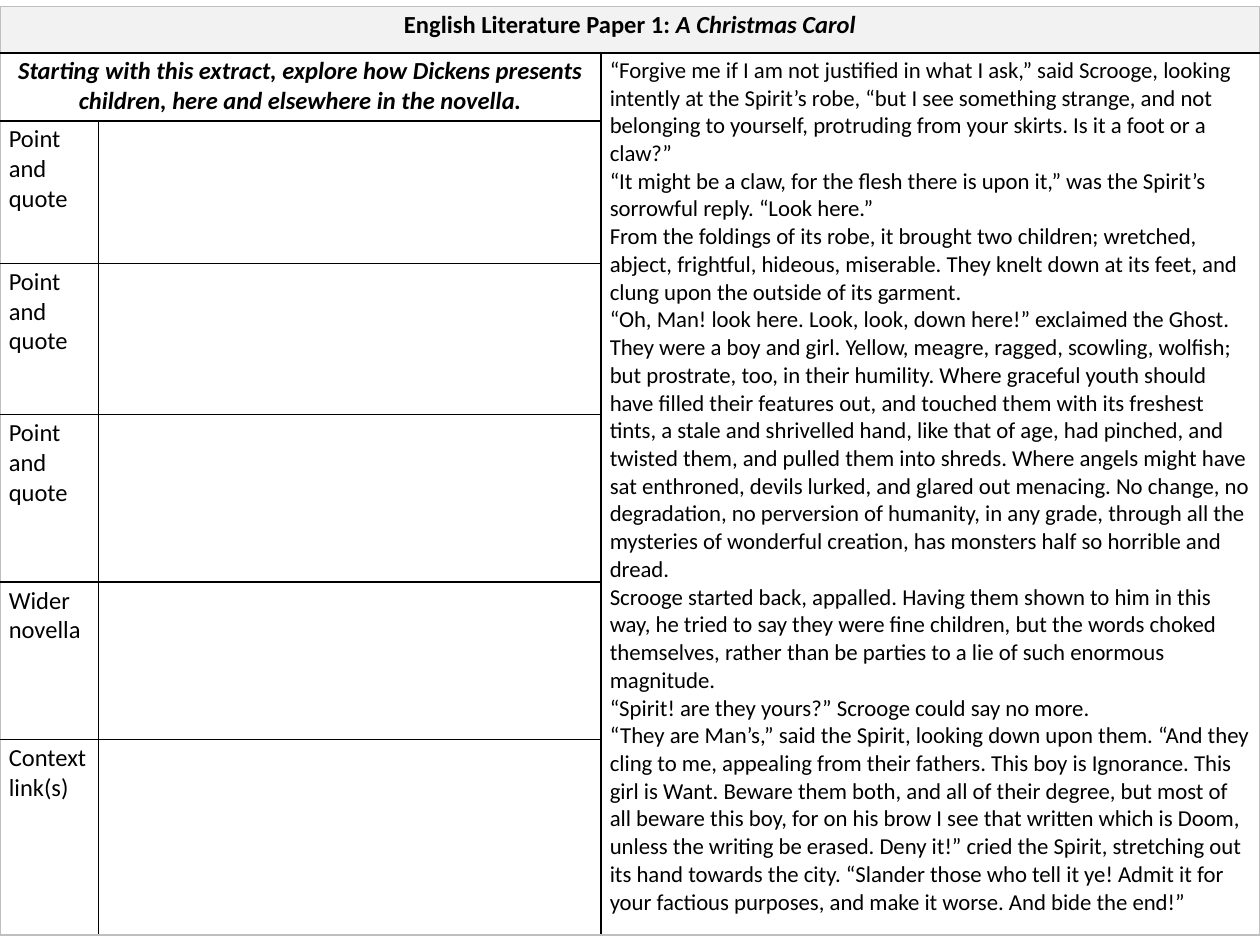
import pptx
import pptx.dml.color
import pptx.enum.text
import pptx.oxml.ns
import pptx.util
from lxml import etree

Inches = pptx.util.Inches
CENTER = pptx.enum.text.PP_ALIGN.CENTER
COLORS = {"text": "000000", "header": "F2F2F2", "inner": "000000", "outer": "BFBFBF"}
COLUMN_WIDTHS = [0.78, 3.99, 5.23]
ROW_HEIGHTS = [0.37, 0.54, 1.13, 1.2, 1.33, 1.25, 1.55]
MERGES = [(0, 0, 0, 2), (1, 0, 1, 1), (1, 2, 6, 2)]
MARGINS = {"margin_left": 0.07, "margin_right": 0.07, "margin_top": 0.03, "margin_bottom": 0.03}
LABEL = {"size": pptx.util.Pt(14), "bold": False, "italic": False}
HEADING = {**LABEL, "bold": True}
PROMPT = {**HEADING, "italic": True}
BODY = {**LABEL, "size": pptx.util.Pt(13)}

TASK = "Starting with this extract, explore how Dickens presents children, here and elsewhere in the novella."
LABELS = ["Point and quote"] * 3 + ["Wider novella", "Context link(s)"]
EXTRACT = [
    "“Forgive me if I am not justified in what I ask,” said Scrooge, looking intently at the "
    "Spirit’s robe, “but I see something strange, and not belonging to yourself, protruding from "
    "your skirts. Is it a foot or a claw?”",
    "“It might be a claw, for the flesh there is upon it,” was the Spirit’s sorrowful reply. “Look here.”",
    "From the foldings of its robe, it brought two children; wretched, abject, frightful, hideous, "
    "miserable. They knelt down at its feet, and clung upon the outside of its garment.",
    "“Oh, Man! look here. Look, look, down here!” exclaimed the Ghost.",
    "They were a boy and girl. Yellow, meagre, ragged, scowling, wolfish; but prostrate, too, in "
    "their humility. Where graceful youth should have filled their features out, and touched them "
    "with its freshest tints, a stale and shrivelled hand, like that of age, had pinched, and "
    "twisted them, and pulled them into shreds. Where angels might have sat enthroned, devils "
    "lurked, and glared out menacing. No change, no degradation, no perversion of humanity, in any "
    "grade, through all the mysteries of wonderful creation, has monsters half so horrible and dread.",
    "Scrooge started back, appalled. Having them shown to him in this way, he tried to say they "
    "were fine children, but the words choked themselves, rather than be parties to a lie of such "
    "enormous magnitude.",
    "“Spirit! are they yours?” Scrooge could say no more.",
    "“They are Man’s,” said the Spirit, looking down upon them. “And they cling to me, appealing "
    "from their fathers. This boy is Ignorance. This girl is Want. Beware them both, and all of "
    "their degree, but most of all beware this boy, for on his brow I see that written which is "
    "Doom, unless the writing be erased. Deny it!” cried the Spirit, stretching out its hand "
    "towards the city. “Slander those who tell it ye! Admit it for your factious purposes, and "
    "make it worse. And bide the end!”",
]


def set_attributes(target, values):
    for name, value in values.items():
        setattr(target, name, value)


def write_cell(cell, paragraphs, alignment=None):
    frame = cell.text_frame
    for index, runs in enumerate(paragraphs):
        paragraph = frame.add_paragraph() if index else frame.paragraphs[0]
        paragraph.alignment = alignment
        for text, font_values in runs:
            run = paragraph.add_run()
            run.text = text
            set_attributes(run.font, {"name": "Calibri", **font_values})
            run.font.color.rgb = pptx.dml.color.RGBColor.from_string(COLORS["text"])


def add_border(cell, side, color):
    qn = pptx.oxml.ns.qn
    properties = cell._tc.get_or_add_tcPr()
    line = etree.SubElement(properties, qn("a:ln" + side), w=str(pptx.util.Pt(1)))
    fill = etree.SubElement(line, qn("a:solidFill"))
    etree.SubElement(fill, qn("a:srgbClr"), val=color)


def merged_area(row, column):
    for top, left, bottom, right in MERGES:
        if top <= row <= bottom and left <= column <= right:
            return top, left, bottom, right
    return row, column, row, column


def style_cell(cell, row, column):
    top, left, bottom, right = merged_area(row, column)
    last_row, last_column = len(ROW_HEIGHTS) - 1, len(COLUMN_WIDTHS) - 1
    edges = [("L", left, column, 0), ("R", right, column, last_column),
             ("T", top, row, 0), ("B", bottom, row, last_row)]
    for side, edge, position, limit in edges:
        if (row, column) == (top, left) or position == edge:
            add_border(cell, side, COLORS["outer" if edge == limit else "inner"])
    set_attributes(cell, {name: Inches(value) for name, value in MARGINS.items()})
    if row == 0:
        cell.fill.solid()
        cell.fill.fore_color.rgb = pptx.dml.color.RGBColor.from_string(COLORS["header"])
    else:
        cell.fill.background()


def add_planning_table(slide):
    table = slide.shapes.add_table(
        len(ROW_HEIGHTS), len(COLUMN_WIDTHS), Inches(0), Inches(0.05),
        Inches(sum(COLUMN_WIDTHS)), Inches(sum(ROW_HEIGHTS))).table
    set_attributes(table, {"first_row": False, "horz_banding": False})
    for column, width in zip(table.columns, COLUMN_WIDTHS):
        column.width = Inches(width)
    for row, height in zip(table.rows, ROW_HEIGHTS):
        row.height = Inches(height)
    for top, left, bottom, right in MERGES:
        table.cell(top, left).merge(table.cell(bottom, right))
    for row in range(len(ROW_HEIGHTS)):
        for column in range(len(COLUMN_WIDTHS)):
            style_cell(table.cell(row, column), row, column)
    return table


def main():
    presentation = pptx.Presentation()
    set_attributes(presentation, {"slide_width": Inches(10), "slide_height": Inches(7.5)})
    slide = presentation.slides.add_slide(presentation.slide_layouts[6])
    table = add_planning_table(slide)
    title = [("English Literature Paper 1: ", HEADING), ("A Christmas Carol", PROMPT)]
    write_cell(table.cell(0, 0), [title], CENTER)
    write_cell(table.cell(1, 0), [[(TASK, PROMPT)]], CENTER)
    write_cell(table.cell(1, 2), [[(text, BODY)] for text in EXTRACT])
    for row, label in enumerate(LABELS, start=2):
        write_cell(table.cell(row, 0), [[(label, LABEL)]])
    presentation.save("out.pptx")


if __name__ == "__main__":
    main()
